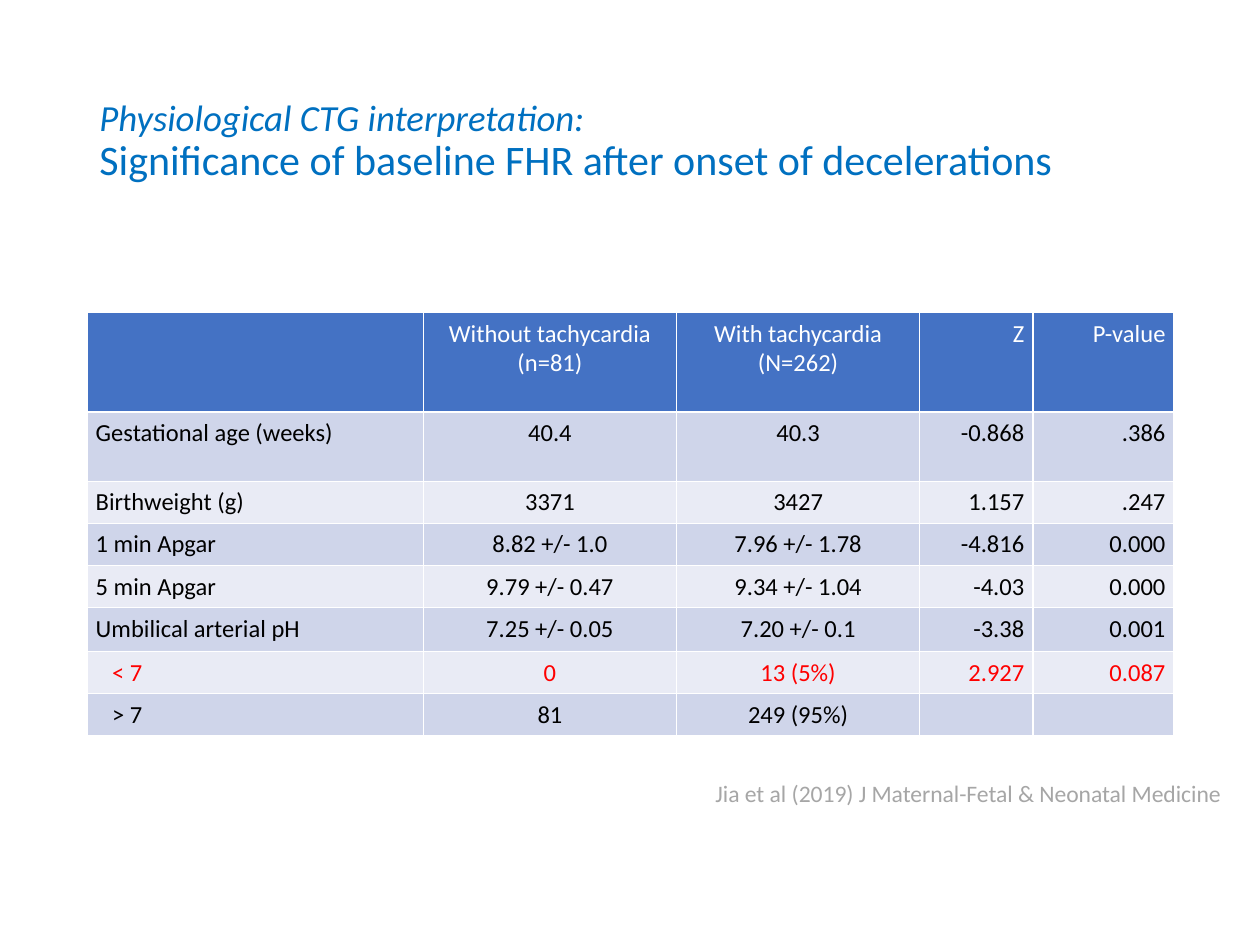
from pptx import Presentation
from pptx.dml.color import RGBColor
from pptx.enum.text import MSO_ANCHOR, PP_ALIGN
from pptx.oxml.ns import qn
from pptx.util import Inches, Pt
from lxml.etree import SubElement

BLUE = RGBColor(0x00, 0x70, 0xC0)
HEAD = RGBColor(0x44, 0x72, 0xC4)
BANDS = (RGBColor(0xCF, 0xD5, 0xEA), RGBColor(0xE9, 0xEB, 0xF5))
WHITE = RGBColor(0xFF, 0xFF, 0xFF)
BLACK = RGBColor(0, 0, 0)
RED = RGBColor(0xFF, 0, 0)
GREY = RGBColor(0xA6, 0xA6, 0xA6)
LEFT, MID, RIGHT = PP_ALIGN.LEFT, PP_ALIGN.CENTER, PP_ALIGN.RIGHT

# Content
TITLE = ("Physiological CTG interpretation:",
         "Significance of baseline FHR after onset of decelerations")
SOURCE = "Jia et al (2019) J Maternal-Fetal & Neonatal Medicine"
ROWS = [
    ("", "Without tachycardia (n=81)", "With tachycardia (N=262)", "Z", "P-value"),
    ("Gestational age (weeks)", "40.4", "40.3", "-0.868", ".386"),
    ("Birthweight (g)", "3371", "3427", "1.157", ".247"),
    ("1 min Apgar", "8.82 +/- 1.0", "7.96 +/- 1.78", "-4.816", "0.000"),
    ("5 min Apgar", "9.79 +/- 0.47", "9.34 +/- 1.04", "-4.03", "0.000"),
    ("Umbilical arterial pH", "7.25 +/- 0.05", "7.20 +/- 0.1", "-3.38", "0.001"),
    ("< 7", "0", "13 (5%)", "2.927", "0.087"),
    ("> 7", "81", "249 (95%)", "", ""),
]
WIDTHS = (2.67, 2.01, 1.93, 0.9, 1.12)
HEIGHTS = (0.79, 0.55, 0.32, 0.32, 0.32, 0.35, 0.32, 0.32)
ALIGNS = (LEFT, MID, MID, RIGHT, RIGHT)
SUBROWS = (6, 7)  # indented under the pH row
ALERT = 6


def write(para, text, size=14, color=BLACK, align=LEFT, italic=False):
    para.alignment = align
    if not text:  # keeps an empty cell from growing
        SubElement(para._p, qn("a:endParaRPr"), sz=str(size * 100))
        return
    run = para.add_run()
    run.text = text
    font = run.font
    font.name, font.size, font.italic = "Calibri", Pt(size), italic
    font.color.rgb = color


def add_box(slide, left, top, width, height, wrap=True):
    box = slide.shapes.add_textbox(*map(Inches, (left, top, width, height)))
    box.text_frame.word_wrap = wrap
    return box.text_frame


def add_edges(cell):
    props = cell._tc.get_or_add_tcPr()
    for side in ("lnL", "lnR", "lnT", "lnB"):
        line = SubElement(props, qn("a:" + side), w=str(Pt(1)))
        fill = SubElement(line, qn("a:solidFill"))
        SubElement(fill, qn("a:srgbClr"), val=str(WHITE))


def fill_cell(cell, text, row, col):
    cell.margin_left = Inches(0.2 if col == 0 and row in SUBROWS else 0.07)
    cell.margin_right = Inches(0.07)
    cell.margin_top = cell.margin_bottom = Inches(0.05)
    add_edges(cell)
    cell.fill.solid()
    cell.fill.fore_color.rgb = BANDS[(row - 1) % 2] if row else HEAD
    color = WHITE if row == 0 else RED if row == ALERT else BLACK
    write(cell.text_frame.paragraphs[0], text, color=color, align=ALIGNS[col])


def main():
    prs = Presentation()
    prs.slide_width, prs.slide_height = Inches(10), Inches(7.5)
    slide = prs.slides.add_slide(prs.slide_layouts[6])

    # Title
    frame = add_box(slide, 0.69, 0.4, 8.62, 1.45)
    frame.vertical_anchor = MSO_ANCHOR.MIDDLE
    para = frame.paragraphs[0]
    para.line_spacing = 0.9
    write(para, TITLE[0], size=21, color=BLUE, italic=True)
    para.add_line_break()
    write(para, TITLE[1], size=24, color=BLUE)

    # Results table
    place = map(Inches, (0.69, 2.48, sum(WIDTHS), sum(HEIGHTS)))
    table = slide.shapes.add_table(len(ROWS), len(WIDTHS), *place).table
    for col, width in zip(table.columns, WIDTHS):
        col.width = Inches(width)
    for r, (row, height) in enumerate(zip(ROWS, HEIGHTS)):
        table.rows[r].height = Inches(height)
        for c, text in enumerate(row):
            fill_cell(table.cell(r, c), text, r, c)

    # Citation
    frame = add_box(slide, 5.58, 6.13, 4.36, 0.33, wrap=False)
    write(frame.paragraphs[0], SOURCE, size=13.5, color=GREY)

    prs.save("out.pptx")


if __name__ == "__main__":
    main()
